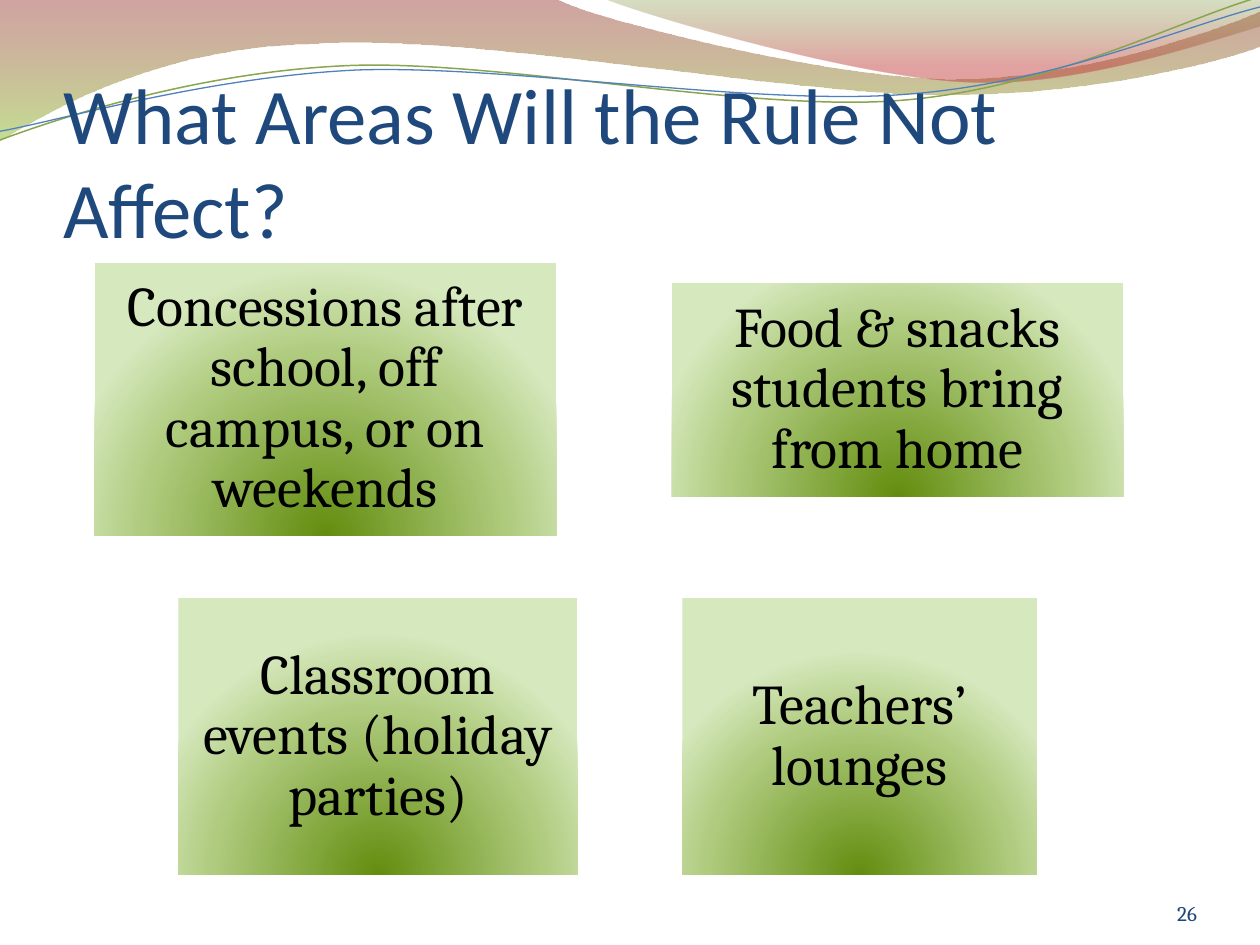
from lxml import etree
from pptx import Presentation
from pptx.dml.color import RGBColor
from pptx.enum.shapes import MSO_SHAPE
from pptx.enum.text import MSO_ANCHOR, MSO_AUTO_SIZE, PP_ALIGN
from pptx.oxml import parse_xml
from pptx.oxml.ns import nsdecls, qn
from pptx.util import Pt

RECTANGLE = MSO_SHAPE.RECTANGLE
MIDDLE, BOTTOM = MSO_ANCHOR.MIDDLE, MSO_ANCHOR.BOTTOM
LEFT, CENTER, RIGHT = PP_ALIGN.LEFT, PP_ALIGN.CENTER, PP_ALIGN.RIGHT
NO_AUTOFIT = MSO_AUTO_SIZE.NONE


def set_gradient(shape, stops, direction):
    shape.fill.gradient()
    stop_xml = "".join(
        f'<a:gs pos="{position * 1000}"><a:srgbClr val="{color}">'
        f'<a:alpha val="{alpha * 1000}"/></a:srgbClr></a:gs>'
        for position, color, alpha in stops)
    old_gradient = shape._element.spPr.find(qn("a:gradFill"))
    old_gradient.getparent().replace(old_gradient, parse_xml(
        f'<a:gradFill {nsdecls("a")} rotWithShape="1">'
        f'<a:gsLst>{stop_xml}</a:gsLst>{direction}</a:gradFill>'))


def format_text(shape, text, size, font_name, color, alignment, anchor, margins):
    frame = shape.text_frame
    frame.text = text
    frame.word_wrap = True
    frame.auto_size = NO_AUTOFIT
    frame.vertical_anchor = anchor
    frame.margin_left, frame.margin_top, frame.margin_right, frame.margin_bottom = map(Pt, margins)
    paragraph = frame.paragraphs[0]
    paragraph.alignment = alignment
    font = paragraph.runs[0].font
    font.size, font.name = Pt(size), font_name
    font.color.rgb = RGBColor.from_string(color)


presentation = Presentation()
presentation.slide_width, presentation.slide_height = Pt(720), Pt(540)
slide = presentation.slides.add_slide(presentation.slide_layouts[5])
shapes = slide.shapes

LINEAR_DOWN = '<a:lin ang="5400000" scaled="0"/>'
LEFT_WAVE = [(0, "973330", 45), (100, "95C238", 55)]
RIGHT_WAVE = [(0, "769537", 30), (80, "BE3330", 45)]

waves = [
    ((0, 0), [
        [(317, -1)],
        [(343, 12), (478, 45), (546, 45)],
        [(614, 45), (690, 19), (720, 6.5)],
        [(721, 26)],
        [(708, 32), (626, 55), (537, 54)],
        [(448, 54), (275, 20), (185, 24.5)],
        [(93, 26), (33, 60), (-1, 81)],
    ], LEFT_WAVE, None),
    ((345, -1), [
        [(366, 8), (491, 45), (554, 47)],
        [(616, 50), (692, 23), (720, 15)],
        [(720, 0)],
    ], RIGHT_WAVE, None),
    ((0, 80), [
        [(35, 67), (114, 41), (199, 37.5)],
        [(284, 34), (427, 64), (513, 57.5)],
        [(600, 51), (675, 11), (719, -1.5)],
    ], None, ("89A54F", 0.85)),
    ((0, 75), [
        [(34, 69), (118, 44), (204, 40)],
        [(290, 37), (430, 60.5), (516, 54)],
        [(602, 48), (676, 15), (720, 4)],
    ], None, ("4F81BD", 0.75)),
]
for start, segments, stops, line in waves:
    builder = shapes.build_freeform(Pt(start[0]), Pt(start[1]))
    builder.add_line_segments(
        [(Pt(segment[-1][0]), Pt(segment[-1][1])) for segment in segments],
        close=stops is not None)
    wave = builder.convert_to_shape()
    wave.shadow.inherit = False
    straight_parts = list(wave._element.spPr.iter(qn("a:lnTo")))
    for straight_part, segment in zip(straight_parts, segments):
        if len(segment) == 3:
            curve = etree.Element(qn("a:cubicBezTo"))
            for x, y in segment:
                etree.SubElement(curve, qn("a:pt"),
                                 x=str(Pt(x) - wave.left), y=str(Pt(y) - wave.top))
            straight_part.getparent().replace(straight_part, curve)
    if stops:
        set_gradient(wave, stops, LINEAR_DOWN)
        wave.line.fill.background()
    else:
        wave.fill.background()
        wave.line.color.rgb = RGBColor.from_string(line[0])
        wave.line.width = Pt(line[1])

title = shapes.title
title.left, title.top, title.width, title.height = Pt(36), Pt(42), Pt(648), Pt(103.5)
format_text(title, "What Areas Will the Rule Not Affect?", 45, "Calibri", "1F497D",
            LEFT, BOTTOM, (0, 3.6, 0, 0))
shapes._spTree.append(title._element)

slide_number = shapes.add_textbox(Pt(624), Pt(500.5), Pt(60), Pt(28.75))
format_text(slide_number, "26", 12, "Cambria", "1E4677", RIGHT, BOTTOM, (0, 0, 0, 0))

GREEN_GLOW = [(0, "638D0F", 100), (68, "AFCB7E", 100), (100, "D6E8BD", 100)]
GLOW_FROM_BELOW = ('<a:path path="circle"><a:fillToRect l="50000" t="130000" '
                   'r="50000" b="-30000"/></a:path>')
areas = [
    ("Concessions after school, off campus, or on weekends", 54, 150, 264, 156),
    ("Food & snacks students bring from home", 384, 162, 258, 121.5),
    ("Classroom events (holiday parties)", 102, 342, 228, 158),
    ("Teachers’ lounges", 390, 342, 202.5, 158),
]
for text, left, top, width, height in areas:
    box = shapes.add_shape(RECTANGLE, Pt(left), Pt(top), Pt(width), Pt(height))
    box.shadow.inherit = False
    set_gradient(box, GREEN_GLOW, GLOW_FROM_BELOW)
    box.line.fill.background()
    format_text(box, text, 32, "Cambria", "000000", CENTER, MIDDLE, (9.6,) * 4)
    box.text_frame.paragraphs[0].line_spacing = 0.9

presentation.save("out.pptx")
